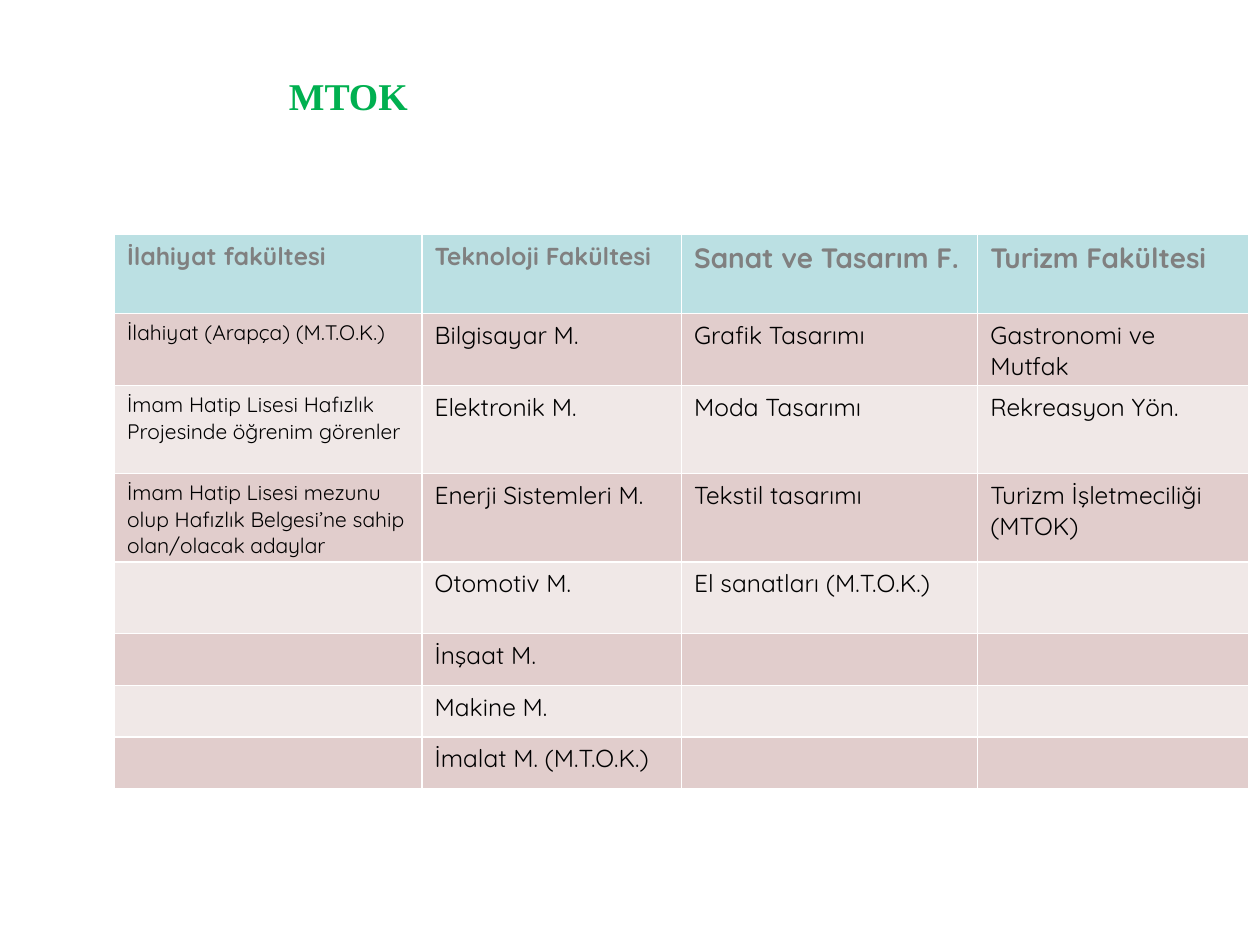
import pptx
import pptx.util
import pptx.dml.color
import pptx.enum.text
from pptx.util import Inches

RGBColor = pptx.dml.color.RGBColor
GREEN = RGBColor(0x00, 0xB0, 0x50)
GRAY = RGBColor(0x80, 0x80, 0x80)
BLACK = RGBColor(0x00, 0x00, 0x00)
HEADER_FILL = RGBColor(0xBB, 0xE0, 0xE3)
BAND_FILLS = [RGBColor(0xF0, 0xE8, 0xE7), RGBColor(0xE1, 0xCD, 0xCC)]

COLUMN_WIDTHS = [2.44, 2.06, 2.35, 2.15]
ROW_HEIGHTS = [0.63, 0.57, 0.7, 0.7, 0.57, 0.41, 0.41, 0.41]
HEADER_SIZES = [14, 14, 16, 16]
BODY_SIZES = [12, 14, 14, 14]
ROWS = [
    ["İlahiyat fakültesi", "Teknoloji Fakültesi", "Sanat ve Tasarım F.", "Turizm Fakültesi"],
    ["İlahiyat (Arapça) (M.T.O.K.)", "Bilgisayar M.", "Grafik Tasarımı", "Gastronomi ve Mutfak"],
    ["İmam Hatip Lisesi Hafızlık Projesinde öğrenim görenler", "Elektronik M.",
     "Moda Tasarımı", "Rekreasyon Yön."],
    ["İmam Hatip Lisesi mezunu olup Hafızlık Belgesi’ne sahip olan/olacak adaylar",
     "Enerji Sistemleri M.", "Tekstil tasarımı", "Turizm İşletmeciliği (MTOK)"],
    ["", "Otomotiv M.", "El sanatları (M.T.O.K.)", ""],
    ["", "İnşaat M.", "", ""],
    ["", "Makine M.", "", ""],
    ["", "İmalat M. (M.T.O.K.)", "", ""],
]


def format_runs(paragraph, font_name, size, color, bold):
    for run in paragraph.runs:
        run.font.name = font_name
        run.font.size = pptx.util.Pt(size)
        run.font.color.rgb = color
        run.font.bold = bold


presentation = pptx.Presentation()
presentation.slide_width = Inches(10)
presentation.slide_height = Inches(7.5)
slide = presentation.slides.add_slide(presentation.slide_layouts[6])

# Title
title = slide.shapes.add_textbox(Inches(1.46), Inches(0.6), Inches(2.61), Inches(0.32))
title_frame = title.text_frame
title_frame.word_wrap = True
title_frame.vertical_anchor = pptx.enum.text.MSO_ANCHOR.MIDDLE
title_frame.margin_top = title_frame.margin_bottom = 0
title_frame.text = "MTOK"
title_paragraph = title_frame.paragraphs[0]
title_paragraph.alignment = pptx.enum.text.PP_ALIGN.CENTER
format_runs(title_paragraph, "Times New Roman", 21.6, GREEN, True)

# Faculty table; its default style draws the white borders
table = slide.shapes.add_table(
    len(ROWS), len(COLUMN_WIDTHS), Inches(0.91), Inches(1.86),
    Inches(sum(COLUMN_WIDTHS)), Inches(sum(ROW_HEIGHTS))).table
for column, width in zip(table.columns, COLUMN_WIDTHS):
    column.width = Inches(width)
for row, height in zip(table.rows, ROW_HEIGHTS):
    row.height = Inches(height)

# Cell text and banded fills
for row_index, texts in enumerate(ROWS):
    is_header = row_index == 0
    sizes = HEADER_SIZES if is_header else BODY_SIZES
    for column_index, text in enumerate(texts):
        cell = table.cell(row_index, column_index)
        cell.fill.solid()
        cell.fill.fore_color.rgb = HEADER_FILL if is_header else BAND_FILLS[row_index % 2]
        if text:
            cell.text_frame.text = text
            format_runs(cell.text_frame.paragraphs[0], "Quicksand", sizes[column_index],
                        GRAY if is_header else BLACK, is_header)

presentation.save("out.pptx")
